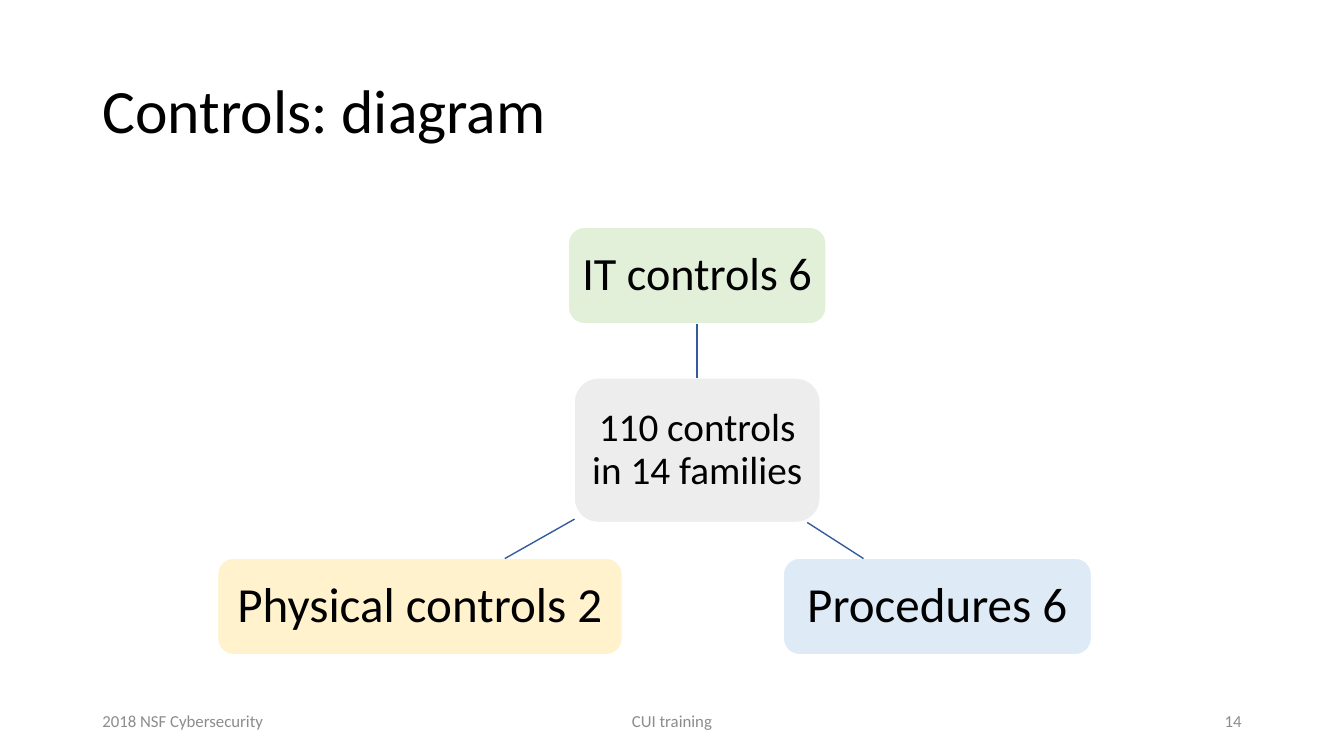
import pptx
import pptx.dml.color
import pptx.enum.shapes
import pptx.enum.text
import pptx.oxml
import pptx.oxml.ns
import pptx.util

COLORS = {
    "text": "000000",
    "footer": "8C8C8C",
    "link": "365B9D",
    "border": "FFFFFF",
    "hub": "EDEDED",
    "it": "E2F0D9",
    "procedures": "DEEBF7",
    "physical": "FFF2CC",
}
COLUMNS, ROWS = 16, 9
TOP, BOTTOM = 0, 2
ALIGN = pptx.enum.text.PP_ALIGN


def rgb(name):
    return pptx.dml.color.RGBColor.from_string(COLORS[name])


def write(frame, text, size, color="text", align=ALIGN.LEFT, spacing=1.0, inset=(0.1, 0.05)):
    """Fill a text frame with one paragraph; inset is horizontal, vertical in inches."""
    frame.word_wrap = True
    frame.vertical_anchor = pptx.enum.text.MSO_ANCHOR.MIDDLE
    frame.margin_left = frame.margin_right = pptx.util.Inches(inset[0])
    frame.margin_top = frame.margin_bottom = pptx.util.Inches(inset[1])
    paragraph = frame.paragraphs[0]
    paragraph.alignment = align
    paragraph.line_spacing = spacing
    run = paragraph.add_run()
    run.text = text
    run.font.name = "Calibri"
    run.font.size = pptx.util.Pt(size)
    run.font.color.rgb = rgb(color)


class Diagram:
    """Draws on one slide; positions are columns and rows of a 16 by 9 grid."""

    def __init__(self, deck):
        self.slide = deck.slides.add_slide(deck.slide_layouts[6])
        self.column = deck.slide_width / COLUMNS
        self.row = deck.slide_height / ROWS

    def place(self, x, y):
        return round(x * self.column), round(y * self.row)

    def label(self, text, left, top, width, height, **style):
        area = self.slide.shapes.add_textbox(*self.place(left, top), *self.place(width, height))
        write(area.text_frame, text, **style)

    def node(self, text, center, middle, width, height, fill, size):
        box = self.slide.shapes.add_shape(
            pptx.enum.shapes.MSO_SHAPE.ROUNDED_RECTANGLE,
            *self.place(center - width / 2, middle - height / 2),
            *self.place(width, height))
        box.shadow.inherit = False
        box.fill.solid()
        box.fill.fore_color.rgb = rgb(fill)
        box.line.color.rgb = rgb("border")
        box.line.width = pptx.util.Pt(1)
        write(box.text_frame, text, size, align=ALIGN.CENTER, spacing=0.9, inset=(0.05, 0.05))
        return box

    def link(self, start, end):
        line = self.slide.shapes.add_connector(
            pptx.enum.shapes.MSO_CONNECTOR.STRAIGHT, *self.place(*start), *self.place(*end))
        line.line.color.rgb = rgb("link")
        line.line.width = pptx.util.Pt(1)
        line._element.spPr.append(pptx.oxml.parse_xml(
            f'<a:effectLst {pptx.oxml.ns.nsdecls("a")}/>'))
        return line


def main():
    deck = pptx.Presentation()
    deck.slide_width = pptx.util.Inches(13.33)
    deck.slide_height = pptx.util.Inches(7.5)
    diagram = Diagram(deck)

    diagram.label("Controls: diagram", 1.1, 0.48, 13.8, 1.74, size=44, spacing=0.9)

    axis, lower, height = 8.3, 7.22, 1.15
    hub = diagram.node("110 controls in 14 families", axis, 5.36, 2.93, 1.72, "hub", 28)
    it_controls = diagram.node("IT controls 6", axis, 3.28, 3.07, height, "it", 33)
    diagram.node("Procedures 6", 11.16, lower, 3.67, height, "procedures", 35)
    diagram.node("Physical controls 2", 5, lower, 4.82, height, "physical", 35)

    hub_to_it = diagram.link((axis, 4.5), (axis, 3.85))
    hub_to_it.begin_connect(hub, TOP)
    hub_to_it.end_connect(it_controls, BOTTOM)
    diagram.link((9.61, 6.22), (10.28, 6.65))
    diagram.link((6.84, 6.18), (6.01, 6.65))

    for text, left, width, align in (
        ("2018 NSF Cybersecurity", 1.1, 3.6, ALIGN.LEFT),
        ("CUI training", 5.3, 5.4, ALIGN.CENTER),
        ("14", 11.3, 3.6, ALIGN.RIGHT),
    ):
        diagram.label(text, left, 8.34, width, 0.48, size=12, color="footer", align=align)

    deck.save("out.pptx")


if __name__ == "__main__":
    main()
